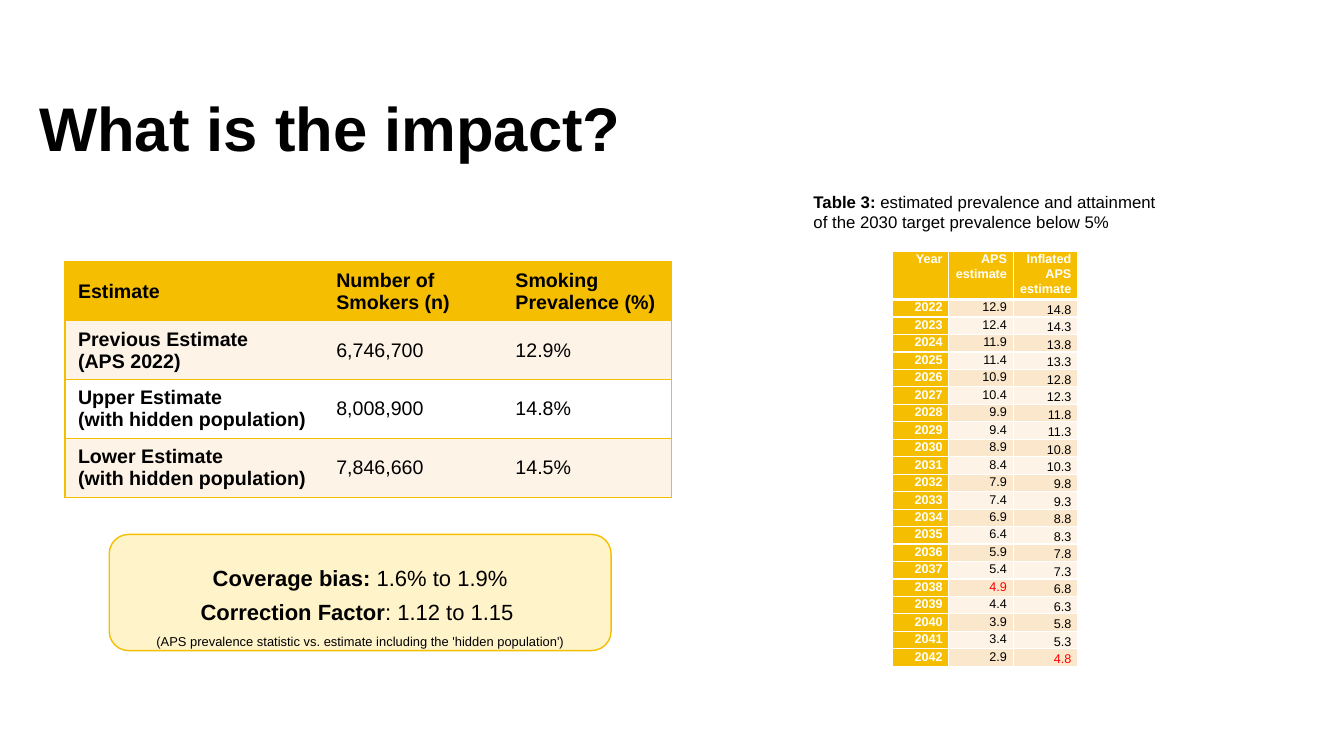
"""Build the slide on the impact of the hidden population on smoking estimates."""
from dataclasses import dataclass

from lxml import etree
from pptx import Presentation
from pptx import util as u
from pptx.dml.color import RGBColor
from pptx.enum import shapes, text
from pptx.oxml.ns import qn

TITLE = "What is the impact?"
ESTIMATES = [
    ("Estimate", "Number of Smokers (n)", "Smoking Prevalence (%)"),
    ("Previous Estimate\n(APS 2022)", "6,746,700", "12.9%"),
    ("Upper Estimate\n(with hidden population)", "8,008,900", "14.8%"),
    ("Lower Estimate\n(with hidden population)", "7,846,660", "14.5%"),
]
CAPTION = [("Table 3:", True),
           (" estimated prevalence and attainment of the 2030 target prevalence below 5%", False)]
FORECAST_HEAD = ("Year", "APS estimate", "Inflated APS estimate")
FIRST_YEAR = 2022
APS = [12.9, 12.4, 11.9, 11.4, 10.9, 10.4, 9.9, 9.4, 8.9, 8.4, 7.9,
       7.4, 6.9, 6.4, 5.9, 5.4, 4.9, 4.4, 3.9, 3.4, 2.9]
INFLATED = [14.8, 14.3, 13.8, 13.3, 12.8, 12.3, 11.8, 11.3, 10.8, 10.3, 9.8,
            9.3, 8.8, 8.3, 7.8, 7.3, 6.8, 6.3, 5.8, 5.3, 4.8]
TARGET = 5


@dataclass(frozen=True)
class Theme:
    """Colours, font and type sizes."""
    font: str = "Arial"
    ink: str = "000000"
    white: str = "FFFFFF"
    gold: str = "F6BE00"
    cream: str = "FFF3CA"
    band: str = "FBE8CC"
    pale: str = "FDF4E7"
    red: str = "FF0000"
    title: float = 44
    finding: float = 15.7
    note: float = 9.2
    estimate: float = 14
    caption: float = 12
    forecast: float = 9


THEME = Theme()
FINDINGS = [
    ([("Coverage bias: ", True), ("1.6% to 1.9%", False)], THEME.finding, 0),
    ([("Correction Factor", True), (": 1.12 to 1.15 ", False)], THEME.finding, 11),
    ([("(APS prevalence statistic vs. estimate including the 'hidden population')", False)],
     THEME.note, 10),
]


def style(font, size, color=THEME.ink, bold=False):
    """Set the look of a font."""
    font.name, font.size, font.bold = THEME.font, u.Pt(size), bold
    font.color.rgb = RGBColor.from_string(color)


def write(para, spans, size):
    """Fill a paragraph with (text, bold) spans."""
    for words, bold in spans:
        span = para.add_run()
        span.text = words
        style(span.font, size, bold=bold)


def set_insets(target, side, top):
    """Set the margins of a cell or text frame."""
    target.margin_left = target.margin_right = u.Pt(side)
    target.margin_top = target.margin_bottom = u.Pt(top)


def add_box(page, left, top, width, height, inset=(0, 0)):
    """Add a wrapping text box and return its frame."""
    frame = page.shapes.add_textbox(*map(u.Pt, (left, top, width, height))).text_frame
    frame.word_wrap = True
    set_insets(frame, *inset)
    return frame


def set_borders(cell, color, widths):
    """Draw left, right, top and bottom cell borders; zero width means none."""
    properties = cell._tc.get_or_add_tcPr()
    for position, (tag, width) in enumerate(zip(("a:lnL", "a:lnR", "a:lnT", "a:lnB"), widths)):
        line = etree.Element(qn(tag), w=str(int(u.Pt(width))))
        if width:
            fill = etree.SubElement(line, qn("a:solidFill"))
            etree.SubElement(fill, qn("a:srgbClr"), val=color)
        else:
            etree.SubElement(line, qn("a:noFill"))
        properties.insert(position, line)


def add_grid(page, left, top, widths, heights):
    """Add an empty table with the given column widths and row heights."""
    table = page.shapes.add_table(len(heights), len(widths), u.Pt(left), u.Pt(top),
                                  u.Pt(sum(widths)), u.Pt(sum(heights))).table
    for column, width in zip(table.columns, widths):
        column.width = u.Pt(width)
    for row, height in zip(table.rows, heights):
        row.height = u.Pt(height)
    return table


def fill_cell(cell, words, fill, size, color, bold, inset):
    """Write one cell and return its paragraphs."""
    cell.fill.solid()
    cell.fill.fore_color.rgb = RGBColor.from_string(fill)
    set_insets(cell, *inset)
    cell.text_frame.text = words
    for para in cell.text_frame.paragraphs:
        for span in para.runs:
            style(span.font, size, color, bold)
    return cell.text_frame.paragraphs


def add_estimates(page):
    """Add the table of current estimates."""
    widths = (184.5, 128, 121)
    table = add_grid(page, 46.5, 187, widths, [40.75] * len(ESTIMATES))
    last = len(widths) - 1
    for r, row in enumerate(ESTIMATES):
        fill = THEME.gold if r == 0 else THEME.pale if r % 2 else THEME.white
        for c, words in enumerate(row):
            cell = table.cell(r, c)
            cell.vertical_anchor = text.MSO_ANCHOR.MIDDLE
            fill_cell(cell, words, fill, THEME.estimate, THEME.ink, r == 0 or c == 0, (9.25, 4.25))
            set_borders(cell, THEME.gold, (int(c == 0), int(c == last), 1, 1))


def add_forecast(page):
    """Add the yearly forecast, marking the first value under target in red."""
    rows = [FORECAST_HEAD] + [(FIRST_YEAR + i, *pair) for i, pair in enumerate(zip(APS, INFLATED))]
    reached = [next(v for v in series if v < TARGET) for series in (APS, INFLATED)]
    table = add_grid(page, 637.5, 179.25, (40.25, 46, 46), [34.5] + [12.5] * len(APS))
    for r, row in enumerate(rows):
        for c, value in enumerate(row):
            cell = table.cell(r, c)
            label = r == 0 or c == 0
            if label:
                fill, color = THEME.gold, THEME.white
            else:
                fill = THEME.band if r % 2 else THEME.pale
                color = THEME.red if value == reached[c - 1] else THEME.ink
            if r and c == 2:
                cell.vertical_anchor = text.MSO_ANCHOR.BOTTOM
            para = fill_cell(cell, str(value), fill, THEME.forecast, color, label, (4.5, 0))[0]
            para.alignment = text.PP_ALIGN.RIGHT
            para.line_spacing, para.space_after = 1.07, u.Pt(8)
            set_borders(cell, THEME.white, (1, 1, 3 if r == 1 else 1, 3 if r == 0 else 1))


def add_findings(page):
    """Add the rounded panel with the headline findings."""
    panel = page.shapes.add_shape(shapes.MSO_SHAPE.ROUNDED_RECTANGLE,
                                  *map(u.Pt, (78, 381.75, 358.5, 83)))
    panel.shadow.inherit = False
    panel.fill.solid()
    panel.fill.fore_color.rgb = RGBColor.from_string(THEME.cream)
    panel.line.color.rgb = RGBColor.from_string(THEME.gold)
    panel.line.width = u.Pt(1)
    frame = panel.text_frame
    frame.word_wrap = True
    frame.vertical_anchor = text.MSO_ANCHOR.TOP
    set_insets(frame, 0, 0)
    frame.margin_top = u.Pt(22.75)
    for i, (spans, size, before) in enumerate(FINDINGS):
        para = frame.add_paragraph() if i else frame.paragraphs[0]
        para.alignment = text.PP_ALIGN.CENTER
        para.line_spacing, para.space_before = 0.7, u.Pt(before)
        write(para, spans, size)


def main():
    """Assemble and save the deck."""
    deck = Presentation()
    deck.slide_width, deck.slide_height = u.Pt(960), u.Pt(540)
    page = deck.slides.add_slide(deck.slide_layouts[6])
    heading = add_box(page, 28, 70.5, 708.5, 108).paragraphs[0]
    heading.line_spacing = 0.9
    write(heading, [(TITLE, True)], THEME.title)
    add_estimates(page)
    add_findings(page)
    add_forecast(page)
    caption = add_box(page, 574, 133.25, 269.25, 40, (7.2, 3.6))
    write(caption.paragraphs[0], CAPTION, THEME.caption)
    deck.save("out.pptx")


if __name__ == "__main__":
    main()
